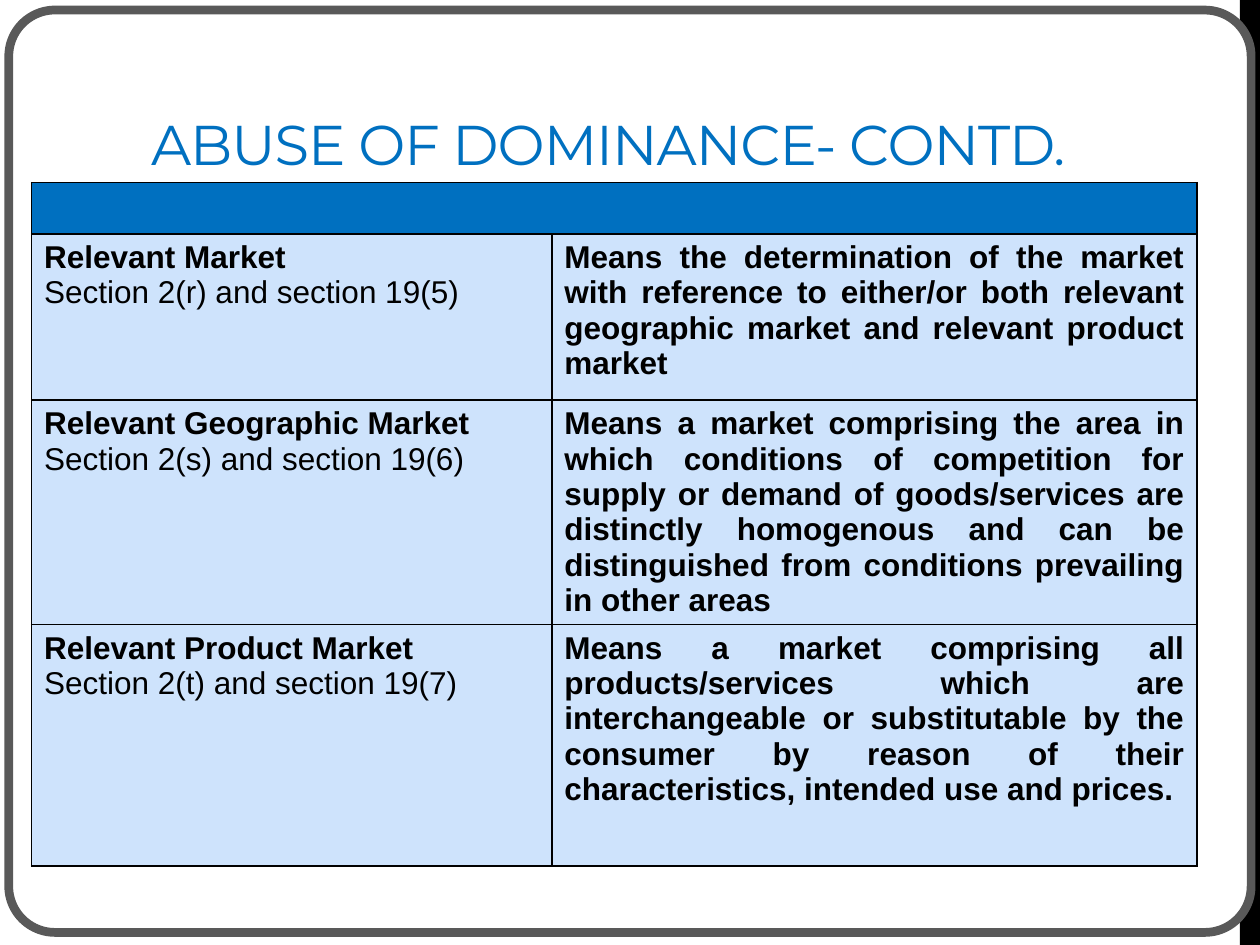
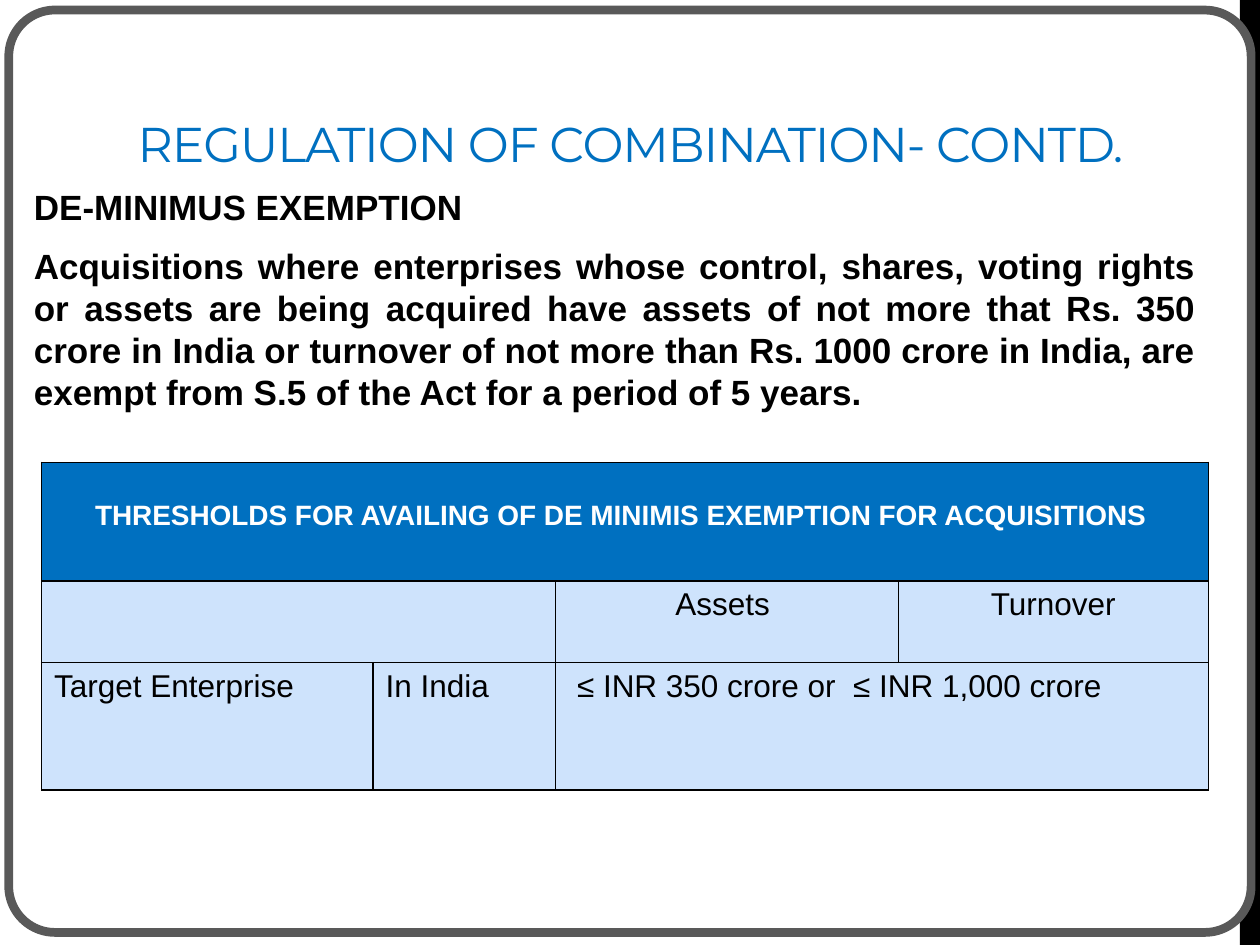
from lxml import etree
from pptx import Presentation
from pptx.dml.color import RGBColor
from pptx.enum import shapes, text
from pptx.oxml.ns import qn
from pptx.util import Inches, Pt

BLUE = RGBColor(0x00, 0x70, 0xC0)
PALE = RGBColor(0xCE, 0xE3, 0xFC)
BLACK = RGBColor(0, 0, 0)
WHITE = RGBColor(255, 255, 255)
GREY = RGBColor(0x59, 0x59, 0x59)
LEFT, MID, JUST = (text.PP_ALIGN.LEFT, text.PP_ALIGN.CENTER,
                   text.PP_ALIGN.JUSTIFY)

MARKETS = [
    ("Relevant Market", "Section 2(r) and section 19(5)",
     "Means the determination of the market with reference to either/or both "
     "relevant geographic market and relevant product market"),
    ("Relevant Geographic Market", "Section 2(s) and section 19(6)",
     "Means a market comprising the area in which conditions of competition "
     "for supply or demand of goods/services are distinctly homogenous and can "
     "be distinguished from conditions prevailing in other areas"),
    ("Relevant Product Market", "Section 2(t) and section 19(7)",
     "Means a market comprising all products/services which are "
     "interchangeable or substitutable by the consumer by reason of their "
     "characteristics, intended use and prices. "),
]
EXEMPT = [
    "DE-MINIMUS EXEMPTION",
    "Acquisitions where enterprises whose control, shares, voting rights or "
    "assets are being acquired have assets of not more that Rs. 350 crore in "
    "India or turnover of not more than Rs. 1000 crore in India, are exempt "
    "from S.5 of the Act for a period of 5 years.",
]
LIMITS = [
    (0, 0, "THRESHOLDS FOR AVAILING OF DE MINIMIS EXEMPTION FOR ACQUISITIONS ",
     dict(size=16, color=WHITE, bold=True, align=MID)),
    (1, 2, "Assets ", dict(align=MID)),
    (1, 3, "Turnover", dict(align=MID)),
    (2, 0, "Target Enterprise", {}),
    (2, 1, "In India", {}),
    (2, 2, "≤ INR 350 crore or  ≤ INR 1,000 crore", {}),
]


def write(frame, lines, size=18, color=BLACK, bold=False, align=LEFT,
          face="Arial", pitch=None, before=0, after=0, track=None):
    frame.word_wrap = True
    for i, line in enumerate(lines):
        para = frame.paragraphs[0] if i == 0 else frame.add_paragraph()
        para.alignment = align
        para.space_before = Pt(before if i else 0)
        para.space_after = Pt(after)
        if pitch:
            para.line_spacing = Pt(pitch)
        run = para.add_run()
        run.text = line
        font = run.font
        font.name, font.size = face, Pt(size)
        font.bold = bold[i] if isinstance(bold, tuple) else bold
        font.color.rgb = color
        if track:
            run._r.get_or_add_rPr().set("spc", str(track))


def head(slide, line, box, size):
    title = slide.shapes.title
    title.left, title.top, title.width, title.height = map(Inches, box)
    frame = title.text_frame
    frame.auto_size = text.MSO_AUTO_SIZE.NONE
    frame.vertical_anchor = text.MSO_ANCHOR.BOTTOM
    write(frame, [line], size=size, color=BLUE, align=MID,
          face="Montserrat", track=-60)


def panel(slide, kind, box, fill, line=None):
    shape = slide.shapes.add_shape(kind, *map(Inches, box))
    shape.shadow.inherit = False
    shape.fill.solid()
    shape.fill.fore_color.rgb = fill
    if line:
        shape.line.color.rgb = line
        shape.line.width = Pt(5)
    else:
        shape.line.fill.background()
    return shape


def dress(layout, slide):
    for hold in list(layout.placeholders):
        if hold.placeholder_format.type != shapes.PP_PLACEHOLDER.TITLE:
            hold.element.getparent().remove(hold.element)
    kinds = shapes.MSO_SHAPE
    parts = [panel(slide, kinds.RECTANGLE, (9.84, top, 0.16, tall), BLACK)
             for top, tall in ((0, 1.5), (1.5, 6))]
    frame = panel(slide, kinds.ROUNDED_RECTANGLE, (0.07, 0.08, 9.86, 7.32),
                  WHITE, GREY)
    frame.adjustments[0] = 0.05
    for i, part in enumerate(parts + [frame]):
        layout.shapes.element.insert(2 + i, part.element)


def edge(cell):
    props = cell._tc.get_or_add_tcPr()
    for side in ("lnL", "lnR", "lnT", "lnB"):
        line = etree.SubElement(props, qn("a:" + side), w=str(Pt(1)))
        fill = etree.SubElement(line, qn("a:solidFill"))
        etree.SubElement(fill, qn("a:srgbClr"), val=str(BLACK))


def grid(slide, left, top, cols, rows):
    box = map(Inches, (left, top, sum(cols), sum(rows)))
    table = slide.shapes.add_table(len(rows), len(cols), *box).table
    table.first_row = table.horz_banding = False
    for col, wide in zip(table.columns, cols):
        col.width = Inches(wide)
    for row, tall in zip(table.rows, rows):
        row.height = Inches(tall)
    for i in range(len(rows)):
        for cell in table.rows[i].cells:
            edge(cell)
            cell.fill.solid()
            cell.fill.fore_color.rgb = PALE if i else BLUE
    table.cell(0, 0).merge(table.cell(0, len(cols) - 1))
    return table


def market(slide):
    head(slide, "ABUSE OF DOMINANCE- CONTD. ", (0.92, 0.33, 7.92, 1.12), 32)
    table = grid(slide, 0.25, 1.45, (4.13, 5.12), (0.38, 1.32, 1.78, 1.92))
    for i, (name, part, sense) in enumerate(MARKETS, 1):
        write(table.cell(i, 0).text_frame, [name, part], bold=(True, False))
        write(table.cell(i, 1).text_frame, [sense], bold=True, align=JUST)


def merger(slide):
    head(slide, "REGULATION OF COMBINATION- CONTD.",
         (0.92, 0.17, 8.17, 1.25), 27.9)
    body = slide.shapes.add_textbox(*map(Inches, (0.17, 1.42, 9.42, 2.1)))
    write(body.text_frame, EXEMPT, size=20, bold=True, align=JUST,
          pitch=24, before=4, after=6)
    table = grid(slide, 0.33, 3.67, (2.63, 1.45, 2.72, 2.46),
                 (0.94, 0.65, 1.01))
    table.cell(1, 0).merge(table.cell(1, 1))
    table.cell(2, 2).merge(table.cell(2, 3))
    table.cell(0, 0).margin_top = Inches(0.3)
    table.cell(2, 2).margin_left = Inches(0.17)
    for row, col, line, look in LIMITS:
        write(table.cell(row, col).text_frame, [line], **look)


def main():
    deck = Presentation()
    deck.slide_width, deck.slide_height = Inches(10), Inches(7.5)
    layout = deck.slide_layouts[5]
    first, second = [deck.slides.add_slide(layout) for _ in range(2)]
    dress(layout, first)
    market(first)
    merger(second)
    deck.save("out.pptx")


if __name__ == "__main__":
    main()
